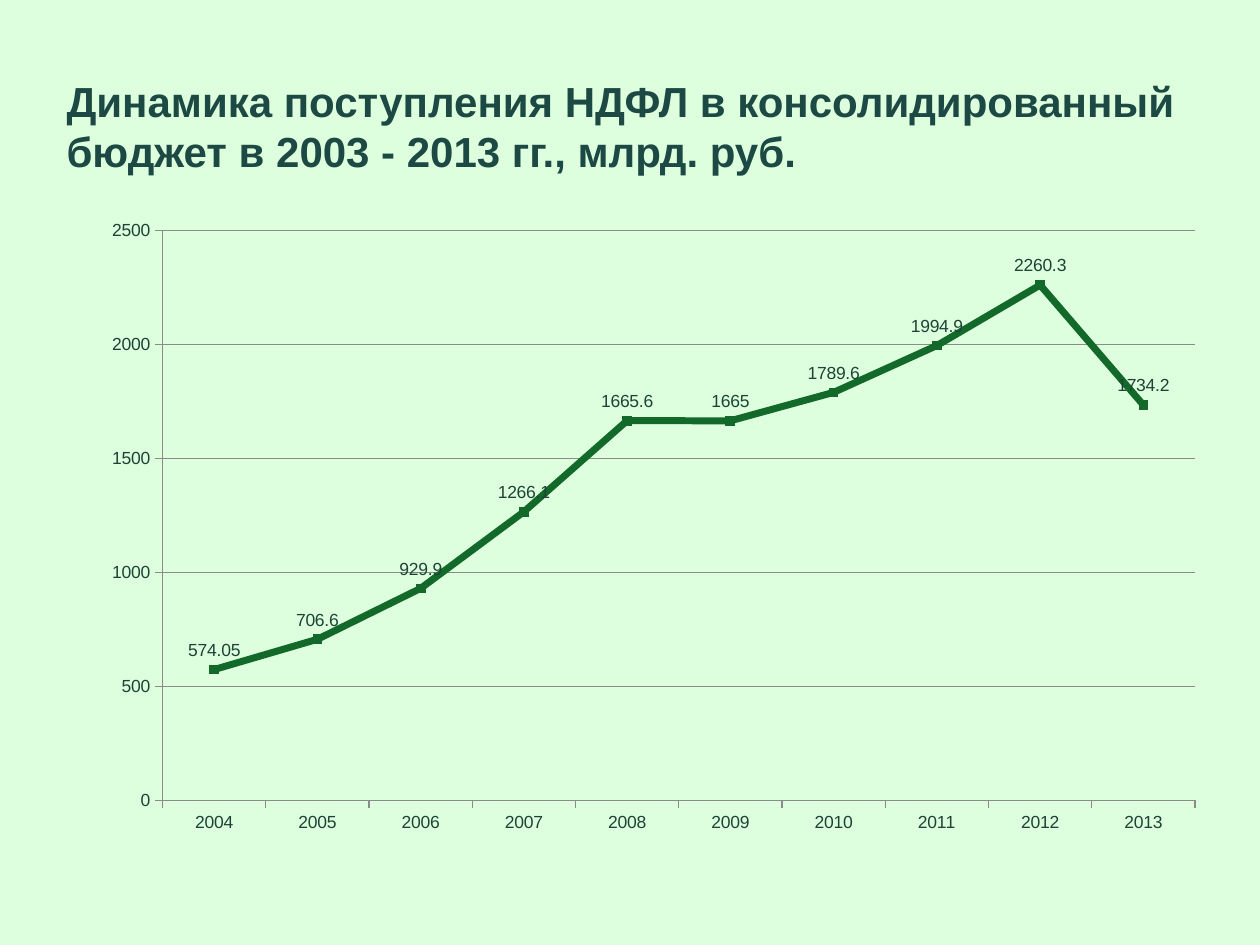
"""Build a slide with a line chart of personal income tax receipts."""
from dataclasses import dataclass

import pptx
import pptx.chart.data
import pptx.dml.color
import pptx.enum.chart
import pptx.enum.text
import pptx.oxml
import pptx.oxml.ns
import pptx.util

RGB = pptx.dml.color.RGBColor.from_string
Pt = pptx.util.Pt


@dataclass(frozen=True)
class Theme:
    font: str = "Arial"
    background: str = "DDFFDD"
    title: str = "1D4944"
    label: str = "1D4337"
    line: str = "13692A"
    grid: str = "8B8B8B"
    title_size: int = 24
    label_size: int = 10


@dataclass(frozen=True)
class Box:
    left: float
    top: float
    width: float
    height: float

    def on(self, prs) -> tuple[int, ...]:
        w, h = prs.slide_width, prs.slide_height
        return (int(self.left * w), int(self.top * h),
                int(self.width * w), int(self.height * h))


THEME = Theme()
TITLE_BOX = Box(0.043, 0.069, 0.906, 0.128)
CHART_BOX = Box(0.043, 0.227, 0.906, 0.704)
PLOT_BOX = Box(0.095, 0.024, 0.905, 0.857)
TITLE = "Динамика поступления НДФЛ в консолидированный бюджет в 2003 - 2013 гг., млрд. руб."
FIRST_YEAR = 2004
RECEIPTS = (574.05, 706.6, 929.9, 1266.1, 1665.6, 1665, 1789.6, 1994.9, 2260.3, 1734.2)


def style_font(font, size: int, color: str, bold: bool = False) -> None:
    font.name, font.size, font.bold = THEME.font, Pt(size), bold
    font.color.rgb = RGB(color)


def style_line(line, color: str, width: float) -> None:
    line.color.rgb = RGB(color)
    line.width = Pt(width)


def add_title(prs, s) -> None:
    tf = s.shapes.add_textbox(*TITLE_BOX.on(prs)).text_frame
    tf.word_wrap = True
    tf.vertical_anchor = pptx.enum.text.MSO_ANCHOR.MIDDLE
    p = tf.paragraphs[0]
    p.text = TITLE
    style_font(p.font, THEME.title_size, THEME.title, bold=True)


def place_plot(chart, box: Box) -> None:
    area = chart._chartSpace.chart.plotArea
    for old in area.findall(pptx.oxml.ns.qn("c:layout")):
        area.remove(old)
    values = {"x": box.left, "y": box.top, "w": box.width, "h": box.height}
    modes = "".join(f'<c:{k}Mode val="edge"/>' for k in "xy")
    sizes = "".join(f'<c:{k} val="{v}"/>' for k, v in values.items())
    area.insert(0, pptx.oxml.parse_xml(
        f'<c:layout {pptx.oxml.ns.nsdecls("c")}><c:manualLayout>'
        f'<c:layoutTarget val="inner"/>{modes}{sizes}</c:manualLayout></c:layout>'))


def style_series(series) -> None:
    series.smooth = False
    style_line(series.format.line, THEME.line, 4)
    marker = series.marker
    marker.style = pptx.enum.chart.XL_MARKER_STYLE.SQUARE
    marker.size = 5
    marker.format.fill.solid()
    marker.format.fill.fore_color.rgb = RGB(THEME.line)
    style_line(marker.format.line, THEME.line, 0.75)
    labels = series.data_labels
    labels.show_value = True
    labels.position = pptx.enum.chart.XL_LABEL_POSITION.ABOVE
    style_font(labels.font, THEME.label_size, THEME.label)


def add_chart(prs, s) -> None:
    data = pptx.chart.data.CategoryChartData()
    data.categories = [str(FIRST_YEAR + i) for i in range(len(RECEIPTS))]
    data.add_series("Series 1", RECEIPTS)
    kind = pptx.enum.chart.XL_CHART_TYPE.LINE_MARKERS_STACKED
    chart = s.shapes.add_chart(kind, *CHART_BOX.on(prs), data).chart
    chart.has_legend = chart.has_title = False
    style_font(chart.font, THEME.label_size, THEME.label)
    chart.plots[0].vary_by_categories = False
    for axis in (chart.category_axis, chart.value_axis):
        axis.major_tick_mark = pptx.enum.chart.XL_TICK_MARK.OUTSIDE
        axis.minor_tick_mark = pptx.enum.chart.XL_TICK_MARK.NONE
        style_line(axis.format.line, THEME.grid, 0.75)
    axis = chart.value_axis
    axis.minimum_scale, axis.maximum_scale, axis.major_unit = 0, 2500, 500
    axis.has_major_gridlines = True
    style_line(axis.major_gridlines.format.line, THEME.grid, 0.75)
    place_plot(chart, PLOT_BOX)
    style_series(chart.plots[0].series[0])


def main() -> None:
    prs = pptx.Presentation()
    prs.slide_width, prs.slide_height = pptx.util.Inches(10), pptx.util.Inches(7.5)
    s = prs.slides.add_slide(prs.slide_layouts[6])
    s.background.fill.solid()
    s.background.fill.fore_color.rgb = RGB(THEME.background)
    add_title(prs, s)
    add_chart(prs, s)
    prs.save("out.pptx")


if __name__ == "__main__":
    main()
